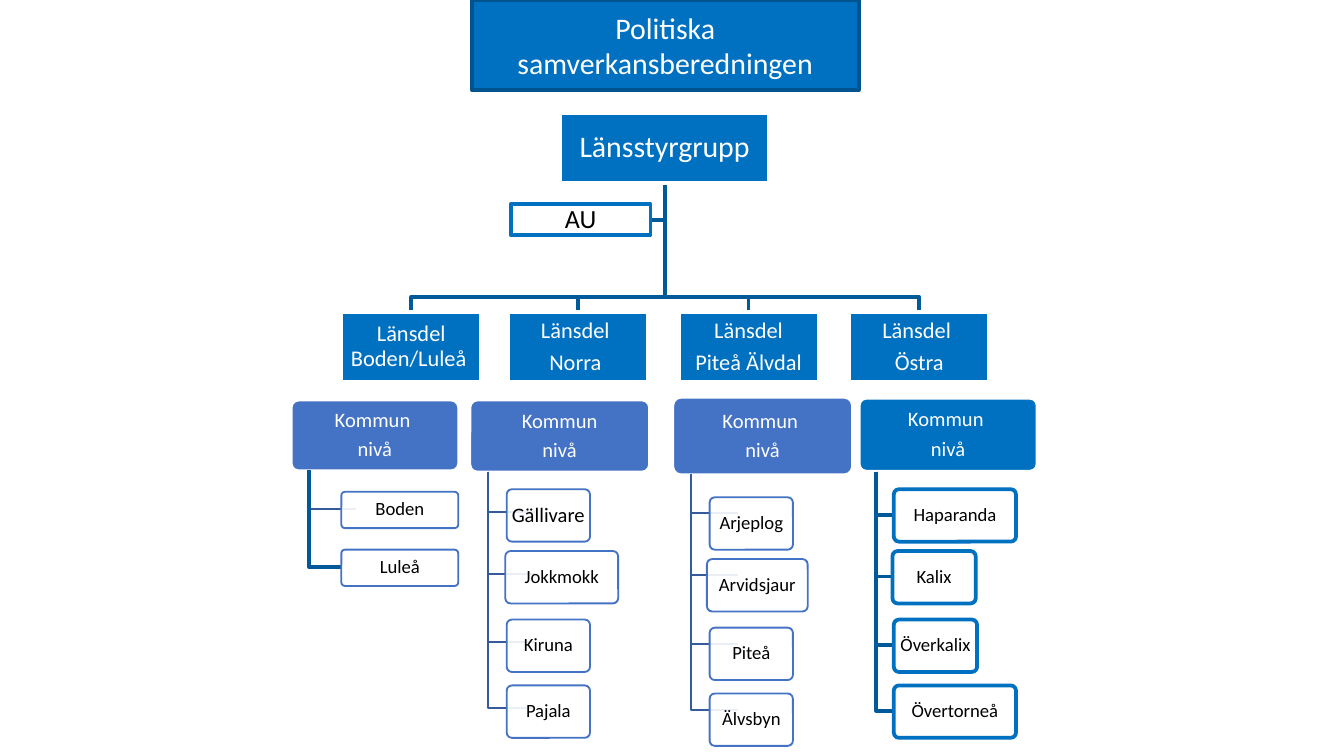
import pptx
import pptx.dml.color
import pptx.enum.shapes
import pptx.enum.text
import pptx.oxml
import pptx.oxml.ns
import pptx.util

PX = 9144  # 100 px to the inch
BLUE, DARK_BLUE = "0070C0", "005A9A"
SOFT_BLUE, SOFT_DARK = "4472C4", "365B9D"
WHITE, BLACK = "FFFFFF", "000000"
RECTANGLE = pptx.enum.shapes.MSO_SHAPE.RECTANGLE
ROUNDED = pptx.enum.shapes.MSO_SHAPE.ROUNDED_RECTANGLE


def color(hex_string):
    return pptx.dml.color.RGBColor.from_string(hex_string)


def set_text(shape, lines, size, text_color, inset=(1, 1), spacing=0.9, after=0.35):
    """Centre the lines in the shape; after is a share of the text size."""
    frame = shape.text_frame
    frame.word_wrap = True
    frame.auto_size = pptx.enum.text.MSO_AUTO_SIZE.NONE
    frame.vertical_anchor = pptx.enum.text.MSO_ANCHOR.MIDDLE
    frame.margin_left = frame.margin_right = inset[0] * PX
    frame.margin_top = frame.margin_bottom = inset[1] * PX
    for index, line in enumerate(lines):
        paragraph = frame.add_paragraph() if index else frame.paragraphs[0]
        paragraph.alignment = pptx.enum.text.PP_ALIGN.CENTER
        paragraph.line_spacing = spacing
        paragraph.space_after = pptx.util.Pt(round(size * after, 1))
        run = paragraph.add_run()
        run.text = line
        run.font.size = pptx.util.Pt(size)
        run.font.name = "Calibri"
        run.font.color.rgb = color(text_color)


def set_look(shape, fill, line, width, opacity=100):
    shape.fill.solid()
    shape.fill.fore_color.rgb = color(fill)
    shape.line.color.rgb = color(line)
    shape.line.width = pptx.util.Pt(width)
    if opacity < 100:
        fill_color = shape.fill._xPr.find(".//" + pptx.oxml.ns.qn("a:srgbClr"))
        alpha = pptx.oxml.parse_xml(
            f'<a:alpha {pptx.oxml.ns.nsdecls("a")} val="{opacity * 1000}"/>')
        fill_color.append(alpha)


def add_box(slide, box, lines, size, fill=BLUE, line=WHITE, width=2,
            text_color=WHITE, kind=RECTANGLE, inset=(1, 1), opacity=100):
    shape = slide.shapes.add_shape(kind, *(length * PX for length in box))
    shape.shadow.inherit = False
    if kind == ROUNDED:
        shape.adjustments[0] = 0.1
    set_look(shape, fill, line, width, opacity)
    set_text(shape, lines, size, text_color, inset)


def add_branch(slide, points, line=DARK_BLUE, width=2):
    builder = slide.shapes.build_freeform(*points[0], scale=PX)
    builder.add_line_segments(points[1:], close=False)
    shape = builder.convert_to_shape()
    shape.shadow.inherit = False
    shape.fill.background()
    shape.line.color.rgb = color(line)
    shape.line.width = pptx.util.Pt(width)


def add_title(slide, box):
    title = slide.shapes.title
    title.left, title.top, title.width, title.height = (length * PX for length in box)
    set_look(title, BLUE, "00538E", 2)
    set_text(title, ["Politiska samverkansberedningen"], 16, WHITE,
             inset=(10, 5), spacing=1.0, after=0)


def add_county_tree(slide, box):
    """Steering group on top, its committee at the side, county parts below."""
    left, top, width, height = box
    part_width, box_height = 104, 52
    trunk, trunk_top = left + 241, top + 53
    parts_top = top + height - box_height
    bar = parts_top - 11
    parts = [
        (0, ["Länsdel Boden/Luleå "]),
        (124, ["Länsdel ", "Norra "]),
        (251, ["Länsdel", "Piteå Älvdal"]),
        (width - part_width, ["Länsdel ", "Östra"]),
    ]
    committee = (left + 126, top + 68, part_width, 23)
    committee_middle = top + 80
    add_branch(slide, [(trunk, trunk_top), (trunk, committee_middle),
                       (left + 126 + part_width, committee_middle)])
    for offset, lines in parts:
        middle = left + offset + part_width // 2
        add_branch(slide, [(trunk, trunk_top), (trunk, bar),
                           (middle, bar), (middle, parts_top)])
        add_box(slide, (left + offset, parts_top, part_width, box_height), lines, 12)
    add_box(slide, (left + 163, top, 155, box_height), ["Länsstyrgrupp"], 16)
    add_box(slide, committee, ["AU"], 14, fill=WHITE, line=BLUE, text_color=BLACK)


def add_municipalities(slide, box, heading, leaves, leaf_height, drop,
                       main=SOFT_BLUE, dark=SOFT_DARK, width=1, reach=35):
    """Heading box with leaves (name, left, top, width, format) on a trunk.

    A branch meets its leaf drop px below the leaf's top, reach px from the trunk.
    """
    left, top, _, height = box
    trunk, trunk_top = left + 13, top + height
    add_box(slide, box, [heading, "nivå"], 11, fill=main, width=width,
            kind=ROUNDED, inset=(2, 2))
    for name, leaf_left, leaf_top, leaf_width, options in leaves:
        x, y = left + leaf_left, top + leaf_top
        end = trunk + options.get("reach", reach)
        add_branch(slide, [(trunk, trunk_top), (trunk, y + drop), (end, y + drop)],
                   options.get("dark", dark), options.get("branch_width", width))
        add_box(slide, (x, y, leaf_width, leaf_height), [name],
                options.get("size", 10), fill=WHITE, line=main, width=width,
                text_color=BLACK, kind=ROUNDED, inset=(2, 1), opacity=90)


def main():
    presentation = pptx.Presentation()
    presentation.slide_width = 1000 * PX
    presentation.slide_height = presentation.slide_width * 9 // 16
    slide = presentation.slides.add_slide(presentation.slide_layouts[5])
    add_title(slide, (351, 0, 288, 67))
    add_county_tree(slide, (254, 84, 482, 200))

    thick = {"dark": DARK_BLUE, "branch_width": 2, "reach": 24}
    add_municipalities(slide, (639, 296, 133, 55), "Kommun ", [
        ("Haparanda", 26, 68, 91, {}),
        ("Kalix", 25, 114, 62, {}),
        ("Överkalix", 26, 165, 62, {}),
        ("Övertorneå", 26, 214, 91, {}),
    ], 39, 19, main=BLUE, dark=DARK_BLUE, width=2, reach=13)
    add_municipalities(slide, (217, 298, 124, 52), "Kommun ", [
        ("Boden", 37, 68, 87, {}),
        ("Luleå", 37, 111, 87, thick),
    ], 27, 13)
    add_municipalities(slide, (501, 296, 133, 57), "Kommun ", [
        ("Arjeplog", 27, 74, 62, {}),
        ("Arvidsjaur", 25, 120, 75, {}),
        ("Piteå", 27, 171, 62, {}),
        ("Älvsbyn", 27, 220, 62, {}),
    ], 39, 12)
    add_municipalities(slide, (350, 298, 133, 53), "Kommun", [
        ("Gällivare", 27, 66, 62, {"size": 11}),
        ("Jokkmokk", 26, 112, 84, {}),
        ("Kiruna", 27, 163, 62, {}),
        ("Pajala", 27, 212, 62, {}),
    ], 39, 17)
    presentation.save("out.pptx")


if __name__ == "__main__":
    main()
